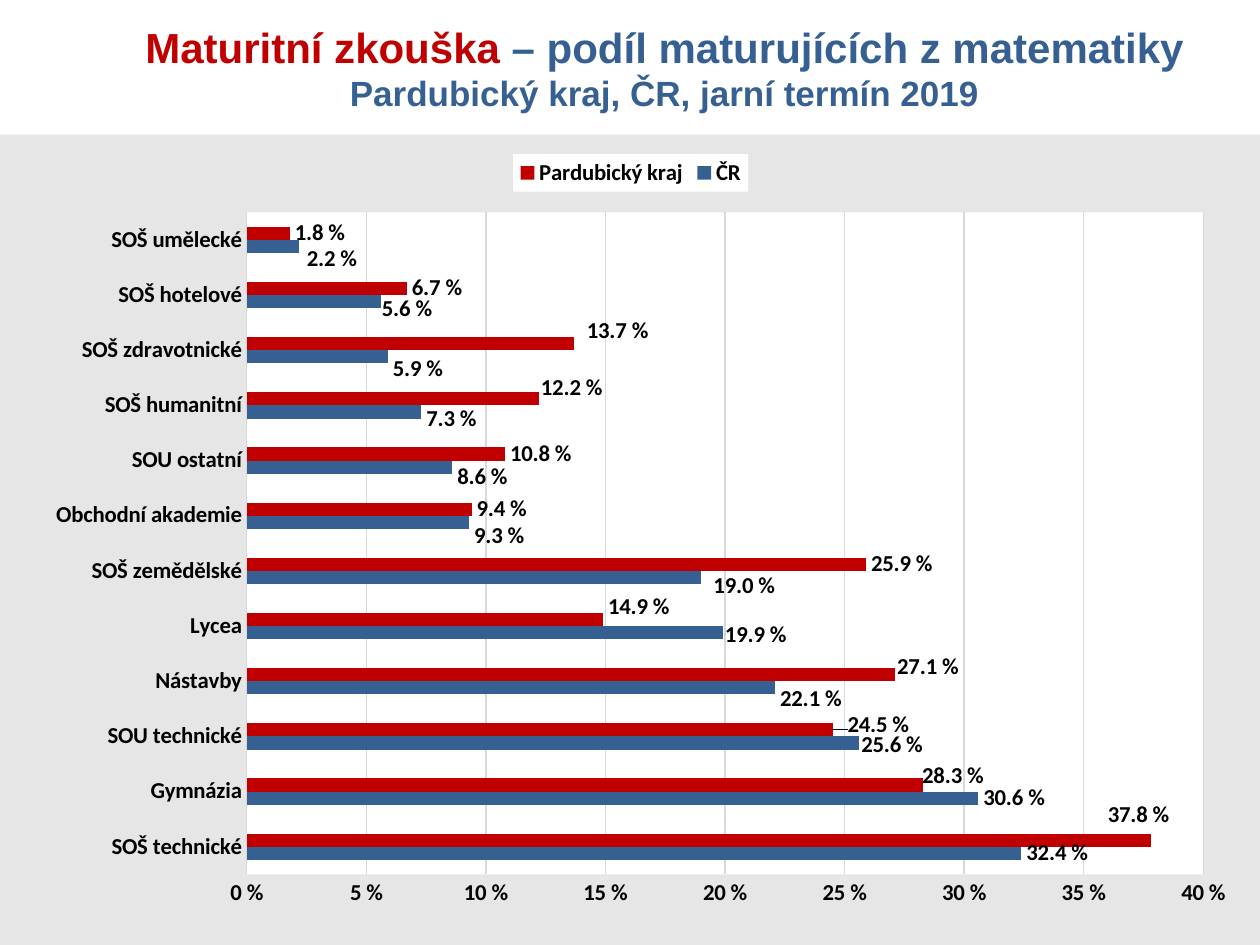
from lxml import etree
from pptx import Presentation
from pptx.chart.data import CategoryChartData
from pptx.dml.color import RGBColor
from pptx.enum.chart import XL_CHART_TYPE, XL_LABEL_POSITION, XL_LEGEND_POSITION, XL_TICK_MARK
from pptx.enum.shapes import MSO_SHAPE
from pptx.enum.text import MSO_ANCHOR, PP_ALIGN
from pptx.oxml import parse_xml
from pptx.oxml.ns import nsdecls, qn
from pptx.util import Inches, Pt

RED = RGBColor(0xC0, 0x00, 0x00)
BLUE = RGBColor(0x37, 0x60, 0x92)
WHITE = RGBColor(0xFF, 0xFF, 0xFF)
BLACK = RGBColor(0x00, 0x00, 0x00)
GRID_GREY = RGBColor(0xD9, 0xD9, 0xD9)
PAGE_GREY = RGBColor(0xE6, 0xE6, 0xE6)

BAR_CLUSTERED = XL_CHART_TYPE.BAR_CLUSTERED
OUTSIDE_END = XL_LABEL_POSITION.OUTSIDE_END
LEGEND_TOP = XL_LEGEND_POSITION.TOP
NO_TICK = XL_TICK_MARK.NONE
RECTANGLE = MSO_SHAPE.RECTANGLE
MIDDLE = MSO_ANCHOR.MIDDLE
CENTER = PP_ALIGN.CENTER

COLUMNS, ROWS = 100, 75
LABEL_FORMAT = r"0.0\ %"

# School type: share in the whole country, share in the region (percent)
SHARES = {
    "SOŠ technické": (32.4, 37.8),
    "Gymnázia": (30.6, 28.3),
    "SOU technické": (25.6, 24.5),
    "Nástavby": (22.1, 27.1),
    "Lycea": (19.9, 14.9),
    "SOŠ zemědělské": (19.0, 25.9),
    "Obchodní akademie": (9.3, 9.4),
    "SOU ostatní": (8.6, 10.8),
    "SOŠ humanitní": (7.3, 12.2),
    "SOŠ zdravotnické": (5.9, 13.7),
    "SOŠ hotelové": (5.6, 6.7),
    "SOŠ umělecké": (2.2, 1.8),
}
# Series: name, colour, label shifts in inches by category number
SERIES = [
    ("ČR", BLUE, {2: (-0.02, 0.02), 3: (0, 0.09), 4: (-0.02, 0.02), 5: (0.06, 0.07),
                  6: (0, 0.11), 7: (0, 0.08), 8: (0, 0.06), 9: (0, 0.1),
                  10: (-0.03, 0.06), 11: (0.02, 0.1)}),
    ("Pardubický kraj", RED, {0: (-0.38, -0.2), 1: (-0.05, -0.07), 2: (0.08, -0.04),
                              3: (-0.02, -0.06), 4: (0, -0.1), 8: (-0.02, -0.08),
                              9: (0.06, -0.1)}),
]


def manual_layout(**settings):
    layout = parse_xml(f"<c:layout {nsdecls('c')}><c:manualLayout/></c:layout>")
    for name, value in settings.items():
        etree.SubElement(layout[0], qn(f"c:{name}")).set("val", str(value))
    return layout


def solid_fill(color):
    return parse_xml(f'<c:spPr {nsdecls("c", "a")}><a:solidFill>'
                     f'<a:srgbClr val="{color}"/></a:solidFill></c:spPr>')


class SlideBuilder:
    def __init__(self, presentation):
        self.slide = presentation.slides.add_slide(presentation.slide_layouts[0])
        self.column = presentation.slide_width / COLUMNS
        self.row = presentation.slide_height / ROWS
        self.slide.background.fill.solid()
        self.slide.background.fill.fore_color.rgb = PAGE_GREY

    def box(self, left, top, width, height):
        return (round(left * self.column), round(top * self.row),
                round(width * self.column), round(height * self.row))

    def style(self, font, name, size, color):
        font.name, font.size, font.bold = name, Pt(size), True
        font.color.rgb = color

    def band(self, *place):
        shape = self.slide.shapes.add_shape(RECTANGLE, *self.box(*place))
        shape.shadow.inherit = False
        shape.fill.solid()
        shape.fill.fore_color.rgb = WHITE
        shape.line.fill.background()
        # Move behind the placeholders
        self.slide.shapes._spTree.insert(2, shape._element)

    def title(self, lines, *place):
        shape = self.slide.shapes.title
        shape.left, shape.top, shape.width, shape.height = self.box(*place)
        shape.text_frame.vertical_anchor = MIDDLE
        paragraph = shape.text_frame.paragraphs[0]
        paragraph.alignment = CENTER
        for number, line in enumerate(lines):
            if number:
                paragraph.add_line_break()
            for text, size, color in line:
                run = paragraph.add_run()
                run.text = text
                self.style(run.font, "Arial", size, color)

    def drop_subtitle(self):
        subtitle = self.slide.placeholders[1]._element
        subtitle.getparent().remove(subtitle)

    def bar_chart(self, *place):
        data = CategoryChartData(number_format=LABEL_FORMAT)
        data.categories = list(SHARES)
        for number, (name, _, _) in enumerate(SERIES):
            data.add_series(name, [round(pair[number] / 100, 3) for pair in SHARES.values()])
        frame = self.slide.shapes.add_chart(BAR_CLUSTERED, *self.box(*place), data)
        chart = frame.chart
        chart.has_title = False
        self.chart_text(chart.font)
        self.plot_area(chart)
        self.axes(chart)
        self.legend(chart)
        for series, (_, color, shifts) in zip(chart.plots[0].series, SERIES):
            series.format.fill.solid()
            series.format.fill.fore_color.rgb = color
            self.labels(series, shifts, frame)

    def chart_text(self, font):
        self.style(font, "Calibri", 13, BLACK)

    def plot_area(self, chart):
        chart.plots[0].gap_width = 219
        chart.plots[0].overlap = 0
        area = chart._chartSpace.chart.plotArea
        for layout in area.findall(qn("c:layout")):
            area.remove(layout)
        area.insert(0, manual_layout(layoutTarget="inner", xMode="edge", yMode="edge",
                                     x=0.183, y=0.086, w=0.79, h=0.845))
        area.append(solid_fill(WHITE))

    def axes(self, chart):
        for axis in (chart.category_axis, chart.value_axis):
            axis.major_tick_mark = axis.minor_tick_mark = NO_TICK
            self.chart_text(axis.tick_labels.font)
        values = chart.value_axis
        values.minimum_scale, values.maximum_scale, values.major_unit = 0, 0.4, 0.05
        values.tick_labels.number_format = r"0\ %"
        values.tick_labels.number_format_is_linked = False
        values.format.line.fill.background()
        for line in (chart.category_axis.format.line, values.major_gridlines.format.line):
            line.color.rgb = GRID_GREY
            line.width = Pt(0.75)

    def legend(self, chart):
        chart.has_legend = True
        chart.legend.position = LEGEND_TOP
        chart.legend.include_in_layout = False
        self.chart_text(chart.legend.font)
        text = chart.legend._element.find(qn("c:txPr"))
        text.addprevious(solid_fill(WHITE))

    def labels(self, series, shifts, frame):
        labels = series.data_labels
        labels.show_value = True
        labels.number_format = LABEL_FORMAT
        labels.number_format_is_linked = False
        labels.position = OUTSIDE_END
        self.chart_text(labels.font)
        for number, (right, down) in shifts.items():
            label = series.points[number].data_label
            self.chart_text(label.font)
            label.position = OUTSIDE_END
            element = labels._element.xpath(f'c:dLbl[c:idx/@val="{number}"]')[0]
            element.insert(1, manual_layout(x=round(Inches(right) / frame.width, 4),
                                            y=round(Inches(down) / frame.height, 4)))


def main():
    presentation = Presentation()
    presentation.slide_width, presentation.slide_height = Inches(10), Inches(7.5)
    builder = SlideBuilder(presentation)

    # Heading on a white band
    builder.band(-1.2, 0, 102.4, 10.7)
    builder.title([
        [("Maturitní zkouška ", 24, RED), ("– podíl maturujících z matematiky", 24, BLUE)],
        [("Pardubický kraj, ČR, jarní termín 2019", 20, BLUE)],
    ], 7.5, 0, 90.5, 10.7)
    builder.drop_subtitle()

    # Shares by school type
    builder.bar_chart(2, 11.5, 96.1, 62.2)
    presentation.save("out.pptx")


if __name__ == "__main__":
    main()
